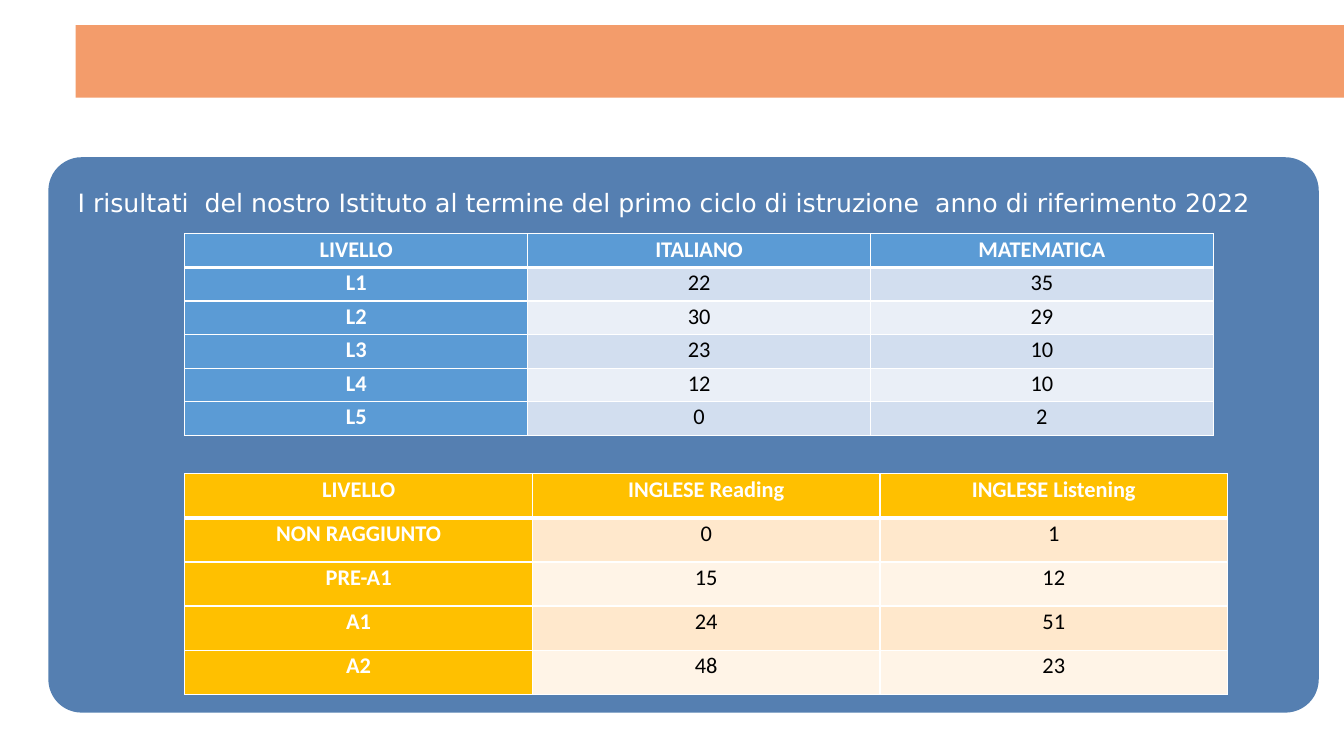
from lxml import etree
from pptx import Presentation
from pptx.dml.color import RGBColor
from pptx.enum.shapes import MSO_SHAPE
from pptx.enum.text import MSO_ANCHOR, MSO_AUTO_SIZE, PP_ALIGN
from pptx.oxml.ns import qn
from pptx.util import Inches, Pt

RECT, ROUNDED = MSO_SHAPE.RECTANGLE, MSO_SHAPE.ROUNDED_RECTANGLE
LEFT, CENTER, TOP = PP_ALIGN.LEFT, PP_ALIGN.CENTER, MSO_ANCHOR.TOP

THEME = {
    "band": "F39C6B", "panel": "0D4A91", "white": "FFFFFF", "black": "000000",
    "blue": ("5B9BD5", "D2DEEF", "EAEFF7"),
    "gold": ("FFC000", "FFE8CC", "FFF4E7"),
    "title_font": "DejaVu Sans", "title_size": 18,
    "table_font": "Calibri", "table_size": 16,
}
PANEL_OPACITY = 70
THIN, THICK = 1, 3

prs = Presentation()
prs.slide_width, prs.slide_height = Inches(13.33), Inches(7.5)
UNIT = prs.slide_height / 90  # square grid of 160 columns by 90 rows


def grid(*lengths):
    return [round(n * UNIT) for n in lengths]


def set_borders(cell, top, bottom):
    """Draw white lines round a cell; call before filling it."""
    tcPr = cell._tc.get_or_add_tcPr()
    for side, width in (("L", THIN), ("R", THIN), ("T", top), ("B", bottom)):
        ln = etree.SubElement(tcPr, qn(f"a:ln{side}"), w=str(Pt(width)))
        fill = etree.SubElement(ln, qn("a:solidFill"))
        etree.SubElement(fill, qn("a:srgbClr"), val=THEME["white"])


s = prs.slides.add_slide(prs.slide_layouts[5])

# Top band and background panel
backdrops = (
    (RECT, (9, 3, 151, 8.64), THEME["band"]),
    (ROUNDED, (5.76, 18.72, 151.2, 66.12), THEME["panel"]),
)
for kind, box, color in backdrops:
    sp = s.shapes.add_shape(kind, *grid(*box))
    sp.shadow.inherit = False
    sp.fill.solid()
    sp.fill.fore_color.rgb = RGBColor.from_string(color)
    sp.line.fill.background()
panel = sp
panel.adjustments[0] = 0.06
panel_color = panel._element.spPr.find(f".//{qn('a:srgbClr')}")
etree.SubElement(panel_color, qn("a:alpha"), val=str(PANEL_OPACITY * 1000))

# Title, placed in front of the panel
title = s.shapes.title
panel._element.addnext(title._element)
title.left, title.top, title.width, title.height = grid(8.04, 21.72, 145.32, 4.8)
tf = title.text_frame
tf.text = ("I risultati  del nostro Istituto al termine del primo ciclo "
           "di istruzione  anno di riferimento 2022")
tf.word_wrap = True
tf.auto_size = MSO_AUTO_SIZE.NONE
tf.vertical_anchor = TOP
p = tf.paragraphs[0]
p.alignment = LEFT
p.font.name = THEME["title_font"]
p.font.size = Pt(THEME["title_size"])
p.font.color.rgb = RGBColor.from_string(THEME["white"])

# Result tables: top, column width, row height, palette, rows
TABLE_LEFT = 22
tables = (
    (27.84, 40.8, 4, THEME["blue"], (
        ("LIVELLO", "ITALIANO", "MATEMATICA"),
        ("L1", 22, 35),
        ("L2", 30, 29),
        ("L3", 23, 10),
        ("L4", 12, 10),
        ("L5", 0, 2),
    )),
    (56.4, 41.37, 5.25, THEME["gold"], (
        ("LIVELLO", "INGLESE Reading", "INGLESE Listening"),
        ("NON RAGGIUNTO", 0, 1),
        ("PRE-A1", 15, 12),
        ("A1", 24, 51),
        ("A2", 48, 23),
    )),
)
for top, col_width, row_height, (accent, odd, even), rows in tables:
    n_rows, n_cols = len(rows), len(rows[0])
    box = grid(TABLE_LEFT, top, n_cols * col_width, n_rows * row_height)
    table = s.shapes.add_table(n_rows, n_cols, *box).table
    table.first_col = True
    for r, values in enumerate(rows):
        for c, value in enumerate(values):
            is_header = r == 0 or c == 0
            cell = table.cell(r, c)
            set_borders(cell, THICK if r == 1 else THIN, THICK if r == 0 else THIN)
            cell.fill.solid()
            color = accent if is_header else odd if r % 2 else even
            cell.fill.fore_color.rgb = RGBColor.from_string(color)
            cell.margin_left = cell.margin_right = Inches(0.07)
            cell.margin_top = cell.margin_bottom = 0
            cell.text = str(value)
            p = cell.text_frame.paragraphs[0]
            p.alignment = CENTER
            p.line_spacing = 1.07
            p.space_after = Pt(8)
            p.font.name = THEME["table_font"]
            p.font.size = Pt(THEME["table_size"])
            p.font.bold = is_header
            p.font.color.rgb = RGBColor.from_string(
                THEME["white" if is_header else "black"])

prs.save("out.pptx")
